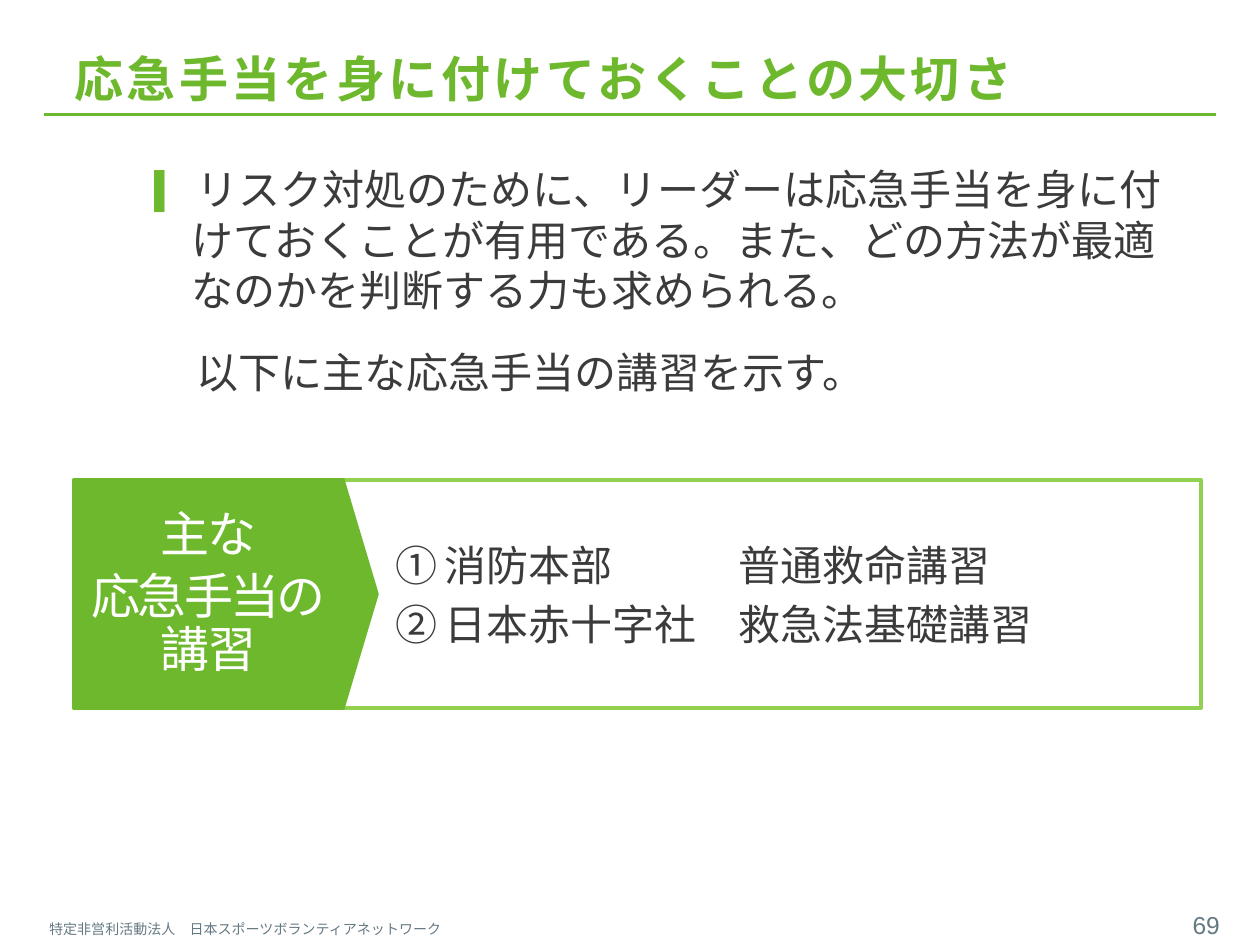
from lxml import etree
from pptx import Presentation
from pptx.dml.color import RGBColor
from pptx.enum.shapes import MSO_CONNECTOR, MSO_SHAPE
from pptx.enum.text import MSO_ANCHOR, MSO_AUTO_SIZE, PP_ALIGN
from pptx.oxml.ns import qn
from pptx.util import Inches, Pt

LEFT, CENTER, RIGHT = PP_ALIGN.LEFT, PP_ALIGN.CENTER, PP_ALIGN.RIGHT
TOP, MIDDLE = MSO_ANCHOR.TOP, MSO_ANCHOR.MIDDLE
NO_AUTOFIT = MSO_AUTO_SIZE.NONE
RECT, TRIANGLE = MSO_SHAPE.RECTANGLE, MSO_SHAPE.ISOSCELES_TRIANGLE
STRAIGHT = MSO_CONNECTOR.STRAIGHT

JP_FONT = "Noto Sans CJK JP"
GREEN, LIGHT_GREEN = "6EB82D", "92D050"
INK, SLATE, WHITE = "3B3B3B", "657983", "FFFFFF"


def rgb(value):
    return RGBColor.from_string(value)


def place(sp, box):
    sp.left, sp.top, sp.width, sp.height = (Inches(v) for v in box)


def set_frame(tf, anchor=TOP, insets=(0.1, 0.05, 0.1, 0.05), wrap=True):
    tf.auto_size = NO_AUTOFIT
    tf.word_wrap = wrap
    tf.vertical_anchor = anchor
    (tf.margin_left, tf.margin_top,
     tf.margin_right, tf.margin_bottom) = (Inches(v) for v in insets)


def set_indent(p, left, hanging=0, bullet=None, numbering=None, tab=None):
    """Set the indents, the bullet or automatic number, and one tab stop."""
    pPr = p._p.get_or_add_pPr()
    pPr.set("marL", str(Inches(left)))
    pPr.set("indent", str(Inches(-hanging)))
    if bullet:
        color = etree.SubElement(pPr, qn("a:buClr"))
        etree.SubElement(color, qn("a:srgbClr"), val=GREEN)
        etree.SubElement(pPr, qn("a:buFont"), typeface=JP_FONT)
        etree.SubElement(pPr, qn("a:buChar"), char=bullet)
    elif numbering:
        etree.SubElement(pPr, qn("a:buFont"), typeface=JP_FONT)
        etree.SubElement(pPr, qn("a:buAutoNum"), type=numbering)
    else:
        etree.SubElement(pPr, qn("a:buNone"))
    if tab:
        tabs = etree.SubElement(pPr, qn("a:tabLst"))
        etree.SubElement(tabs, qn("a:tab"), pos=str(Inches(tab)), algn="l")


def add_text(tf, text, size=24, color=INK, font=JP_FONT, bold=False,
             align=LEFT, line=1.0, before=0, spacing=None, indent=None):
    """Add a paragraph, using the empty first one if there is one."""
    first = tf.paragraphs[0]
    p = tf.add_paragraph() if first.runs else first
    if indent:
        set_indent(p, **indent)
    p.alignment = align
    p.line_spacing = line
    p.space_before = Pt(before)
    for i, part in enumerate(text.split("\n")):
        if i:
            p.add_line_break()
        r = p.add_run()
        r.text = part
        r.font.size, r.font.bold, r.font.name = Pt(size), bold, font
        r.font.color.rgb = rgb(color)
        rPr = r._r.get_or_add_rPr()
        if spacing is not None:
            rPr.set("spc", str(int(spacing * 100)))
        east_asian = etree.Element(qn("a:ea"), typeface=font)
        rPr.find(qn("a:latin")).addnext(east_asian)


def add_box(shapes, kind, box, fill, line):
    sp = shapes.add_shape(kind, *(Inches(v) for v in box))
    sp.shadow.inherit = False
    sp.fill.solid()
    sp.fill.fore_color.rgb = rgb(fill)
    sp.line.color.rgb = rgb(line)
    sp.line.width = Pt(2.25)
    return sp


def add_footer(slide, box, text, insets=(0.1, 0.05, 0.1, 0.05), **style):
    tf = slide.shapes.add_textbox(*(Inches(v) for v in box)).text_frame
    set_frame(tf, insets=insets)
    add_text(tf, text, color=SLATE, **style)


def add_title(slide, box):
    title = slide.shapes.title
    place(title, box)
    set_frame(title.text_frame, MIDDLE, (0, 0.05, 0.1, 0.05))
    add_text(title.text_frame, "応急手当を身に付けておくことの大切さ",
             size=28, color=GREEN, bold=True, spacing=2)


def add_rule(slide, left, right, y):
    rule = slide.shapes.add_connector(
        STRAIGHT, Inches(left), Inches(y), Inches(right), Inches(y))
    rule.line.color.rgb = rgb(GREEN)
    rule.line.width = Pt(1.5)
    etree.SubElement(rule._element.spPr, qn("a:effectLst"))


def add_body(slide, box):
    body = slide.placeholders[1]
    place(body, box)
    tf = body.text_frame
    set_frame(tf)
    add_text(tf, "リスク対処のために、リーダーは応急手当を身に付けておくことが有用である。"
                 "また、どの方法が最適なのかを判断する力も求められる。",
             indent=dict(left=0.79, hanging=0.29, bullet="▎"))
    add_text(tf, "以下に主な応急手当の講習を示す。", before=18,
             indent=dict(left=0.83))


def add_courses(slide, box, label_width=2.13, point=0.27):
    """Draw the framed course list with its arrow-shaped label."""
    left, top, width, height = box
    tf = add_box(slide.shapes, RECT, box, WHITE, LIGHT_GREEN).text_frame
    set_frame(tf, MIDDLE, (0, 0.05, 0, 0.05))
    courses = [("消防本部", "普通救命講習"), ("日本赤十字社", "救急法基礎講習")]
    for i, course in enumerate(courses):
        add_text(tf, "\t".join(course), before=4.8 if i else 0,
                 indent=dict(left=2.94, hanging=0.39, tab=5.27,
                             numbering="circleNumDbPlain"))

    group = slide.shapes.add_group_shape()
    label = add_box(group.shapes, RECT, (left, top, label_width, height),
                    GREEN, GREEN)
    set_frame(label.text_frame, MIDDLE, (0, 0, 0, 0), wrap=False)
    for i, text in enumerate(["主な", "応急手当の\n講習"]):
        add_text(label.text_frame, text, size=28, color=WHITE, align=CENTER,
                 line=0.9, before=5.6 if i else 0, spacing=-1.5)
    # The triangle is turned about its centre, so its width runs vertically.
    center_x, center_y = left + label_width + point / 2, top + height / 2
    tip = add_box(group.shapes, TRIANGLE,
                  (center_x - height / 2, center_y - point / 2, height, point),
                  GREEN, GREEN)
    tip.rotation = 90


def main():
    prs = Presentation()
    prs.slide_width, prs.slide_height = Inches(10), Inches(7.5)
    slide = prs.slides.add_slide(prs.slide_layouts[1])
    add_footer(slide, (0.39, 7.26, 5.13, 0.24),
               "特定非営利活動法人\u3000日本スポーツボランティアネットワーク".replace("\u3000", "　"),
               insets=(0, 0.05, 0.1, 0.05), size=8)
    add_rule(slide, 0.35, 9.65, 0.91)
    add_footer(slide, (9.27, 7.17, 0.51, 0.34), "69",
               size=14, font="Arial", align=RIGHT)
    add_title(slide, (0.59, 0.36, 7.91, 0.52))
    add_body(slide, (0.63, 1.25, 8.78, 2.4))
    add_courses(slide, (0.59, 3.81, 8.94, 1.81))
    prs.save("out.pptx")


if __name__ == "__main__":
    main()
